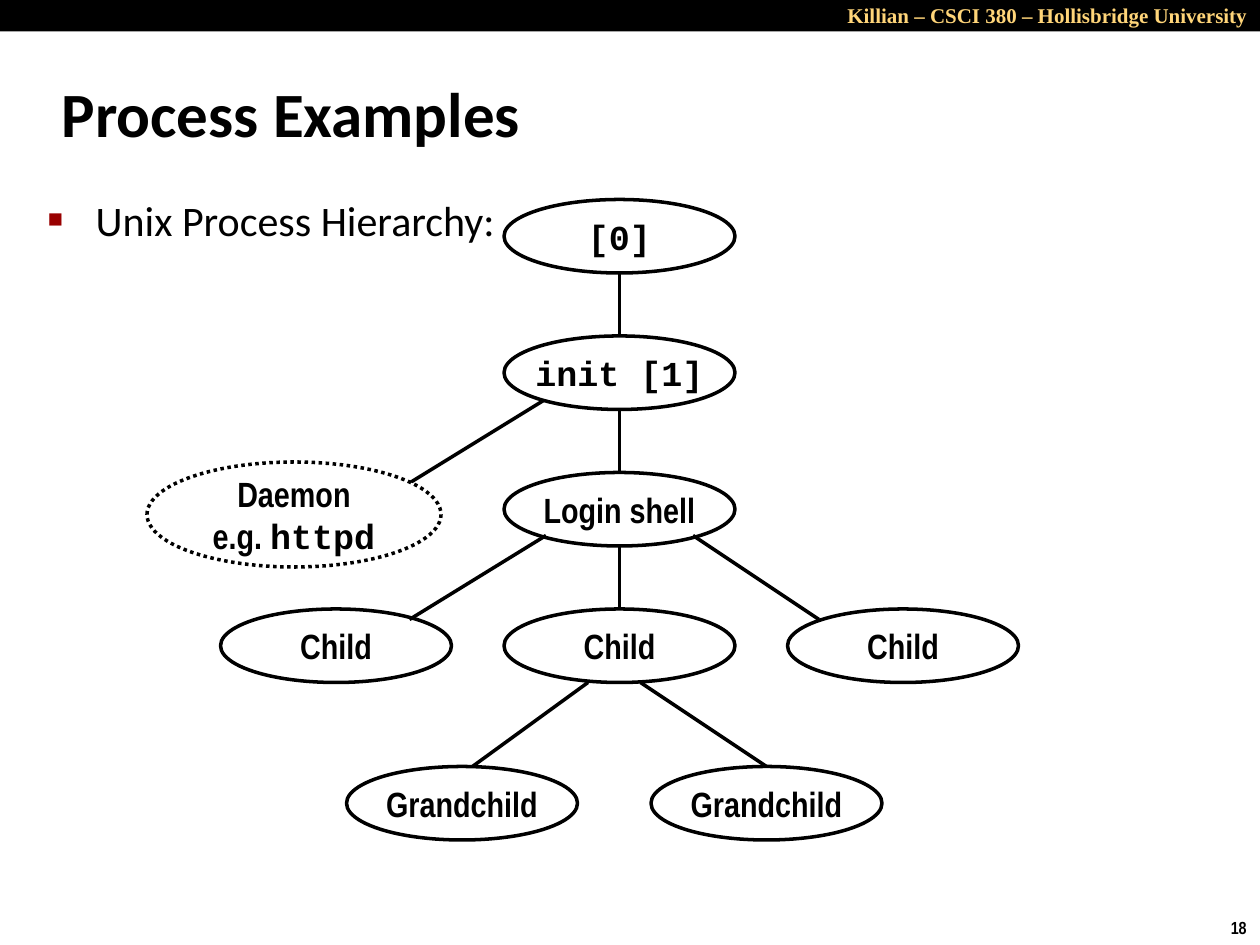
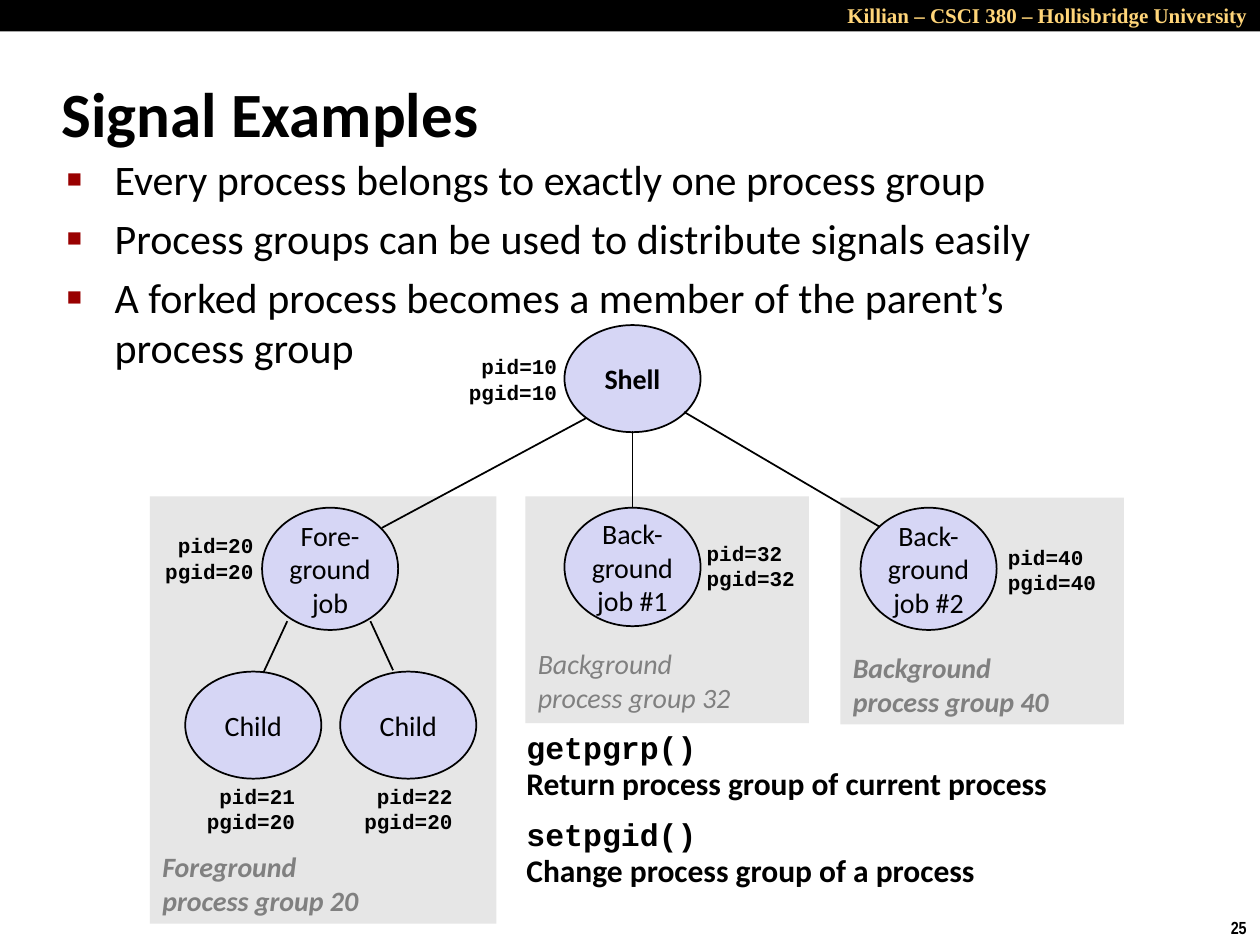
import lxml.etree
import pptx
import pptx.dml.color
import pptx.enum.dml
import pptx.enum.shapes
import pptx.enum.text
import pptx.oxml.ns
import pptx.util

ALIGN = pptx.enum.text.PP_ALIGN
ANCHOR = pptx.enum.text.MSO_ANCHOR
FIT = pptx.enum.text.MSO_AUTO_SIZE
SHAPE = pptx.enum.shapes.MSO_SHAPE
Pt = pptx.util.Pt

BLACK, WHITE, GOLD, MAROON = "000000", "FFFFFF", "FFD579", "990000"
PALE_GREY, GREY, LAVENDER = "E6E6E6", "808080", "D6D6F5"


def font(name, size, colour=BLACK, bold=True, italic=False):
    return {"name": name, "size": Pt(size), "bold": bold, "italic": italic}, colour


FONTS = {
    "course": font("Times New Roman", 12, GOLD),
    "number": font("Arial Narrow", 10),
    "title": font("Calibri", 36),
    "body": font("Calibri", 24, bold=False),
    "process": font("Arial Narrow", 20),
    "command": font("Courier New", 20),
    "shell": font("Calibri", 16),
    "job": font("Calibri", 16, bold=False),
    "ids": font("Courier New", 12),
    "group": font("Calibri", 16, GREY, italic=True),
    "light group": font("Calibri", 16, GREY, bold=False, italic=True),
    "call": font("Courier New", 18),
    "meaning": font("Calibri", 18),
}


def rgb(colour):
    return pptx.dml.color.RGBColor.from_string(colour)


def apply(target, values):
    for name, value in values.items():
        setattr(target, name, value)


class Deck:
    def __init__(self):
        self.file = pptx.Presentation()
        self.file.slide_width = pptx.util.Inches(10)
        self.file.slide_height = pptx.util.Inches(7.5)

    def grid(self, columns, rows):
        self.column = self.file.slide_width / columns
        self.row = self.file.slide_height / rows

    def place(self, *lengths):
        return [round(length * unit) for length, unit in zip(lengths, (self.column, self.row) * 2)]

    def start_slide(self, title, number, points, body_corner):
        self.slide = self.file.slides.add_slide(self.file.slide_layouts[1])
        self.grid(100, 75)
        self.shape(SHAPE.RECTANGLE, (0, 0, 100, 2.5), BLACK)
        self.text((58.3, -0.3, 41.7, 3), ["Killian – CSCI 380 – Hollisbridge University"],
                  "course", {"alignment": ALIGN.RIGHT}, wrap=True, anchor=ANCHOR.TOP)
        self.text((96.7, 72.3, 3.4, 2.7), [number], "number", anchor=ANCHOR.TOP)
        heading, body = self.slide.placeholders
        self.fill_placeholder(heading, (3.9, 4.8, 83, 8.3), [title], "title", ANCHOR.MIDDLE)
        self.fill_placeholder(body, (*body_corner, 86.4, 54.4), points, "body", ANCHOR.TOP)
        for point in body.text_frame.paragraphs:
            self.bullet(point)

    def fill_placeholder(self, holder, box, lines, style, anchor):
        apply(holder, dict(zip(("left", "top", "width", "height"), self.place(*box))))
        apply(holder.text_frame, {"auto_size": FIT.NONE, "vertical_anchor": anchor, "word_wrap": True})
        self.set_lines(holder.text_frame, lines, style, {"alignment": ALIGN.LEFT})

    def bullet(self, paragraph):
        properties = paragraph._p.get_or_add_pPr()
        properties.set("marL", str(pptx.util.Inches(0.38)))
        properties.set("indent", str(-pptx.util.Inches(0.38)))

        def add(parent, tag, **attributes):
            return lxml.etree.SubElement(parent, pptx.oxml.ns.qn(tag), attributes)

        add(add(properties, "a:buClr"), "a:srgbClr", val=MAROON)
        add(properties, "a:buSzPct", val="60000")
        add(properties, "a:buFont", typeface="Arial")
        add(properties, "a:buChar", char="■")

    def set_lines(self, frame, lines, style, layout):
        for index, line in enumerate(lines):
            paragraph = frame.add_paragraph() if index else frame.paragraphs[0]
            apply(paragraph, layout)
            for words, words_style in [(line, style)] if isinstance(line, str) else line:
                run = paragraph.add_run()
                run.text = words.rstrip("\n")
                values, colour = FONTS[words_style]
                apply(run.font, values)
                run.font.color.rgb = rgb(colour)
                if words.endswith("\n"):
                    paragraph.add_line_break()

    def text(self, box, lines, style, layout=None, wrap=False, anchor=ANCHOR.MIDDLE, fit=FIT.SHAPE_TO_FIT_TEXT):
        frame = self.slide.shapes.add_textbox(*self.place(*box)).text_frame
        apply(frame, {"word_wrap": wrap, "vertical_anchor": anchor, "auto_size": fit})
        self.set_lines(frame, lines, style, layout or {"alignment": ALIGN.LEFT})

    def shape(self, kind, box, fill):
        shape = self.slide.shapes.add_shape(kind, *self.place(*box))
        shape.shadow.inherit = False
        shape.fill.solid()
        shape.fill.fore_color.rgb = rgb(fill)
        shape.line.fill.background()
        return shape

    def outline(self, line, width, dash=None):
        line.color.rgb = rgb(BLACK)
        apply(line, {"width": Pt(width), "dash_style": dash})

    def node(self, box, lines, style, fill=WHITE, width=2, dash=None):
        oval = self.shape(SHAPE.OVAL, box, fill)
        self.outline(oval.line, width, dash)
        apply(oval.text_frame, {"word_wrap": False, "vertical_anchor": ANCHOR.MIDDLE})
        self.set_lines(oval.text_frame, lines, style, {"alignment": ALIGN.CENTER})

    def link(self, start, end, width):
        connector = self.slide.shapes.add_connector(
            pptx.enum.shapes.MSO_CONNECTOR.STRAIGHT, *self.place(*start, *end))
        self.outline(connector.line, width)
        lxml.etree.SubElement(connector._element.spPr, pptx.oxml.ns.qn("a:effectLst"))


def process_examples(deck):
    deck.start_slide("Process Examples", "18", ["Unix Process Hierarchy:"], (2.8, 14.9))
    deck.grid(120, 90)
    trunk, step, width, height = 48, 13, 22, 7
    root, init, login, child = [19 + step * level for level in range(4)]
    grandchild = 73

    def process(column, row, name, style="process"):
        deck.node((column, row, width, height), [name], style)

    process(trunk, login, "Login shell")
    for column in (75, trunk, 21):
        process(column, child, "Child")
    for column in (62, 33):
        process(column, grandchild, "Grandchild")
    process(trunk, root, "[0]", "command")
    middle = trunk + width / 2
    for parent in (root, init, login):
        deck.link((middle, parent + height), (middle, parent + step), 2)
    for start, end in (((52, 51), (39, 59)), ((66, 51), (78, 59)), ((61, 65), (73, grandchild)),
                       ((56, 65), (45, grandchild)), ((52, 38), (39, 46))):
        deck.link(start, end, 2)
    deck.node((14, 44, 28, 10), ["Daemon", [("e.g. ", "process"), ("httpd", "command")]],
              "process", dash=pptx.enum.dml.MSO_LINE.ROUND_DOT)
    process(trunk, init, "init [1]", "command")


def signal_examples(deck):
    deck.start_slide("Signal Examples", "25", [
        "Every process belongs to exactly one process group",
        "Process groups can be used to distribute signals easily",
        "A forked process becomes a member of the parent’s process group",
    ], (4.3, 11.7))

    for area in ((66.7, 39.5, 22.5, 18), (41.7, 39.4, 22.5, 18), (11.9, 39.4, 27.5, 33.9)):
        deck.shape(SHAPE.RECTANGLE, area, PALE_GREY)

    for column, row, height, lines, style in (
        (20.8, 40.3, 9.7, ["Fore-", "ground", "job"], "job"),
        (44.8, 40.3, 9.4, ["Back-", "ground", "job #1"], "job"),
        (68.3, 40.3, 9.7, ["Back-", "ground", "job #2"], "job"),
        (44.8, 25.8, 8.5, ["Shell"], "shell"),
        (14.7, 53.3, 8.5, ["Child"], "job"),
        (27, 53.3, 8.5, ["Child"], "job"),
    ):
        deck.node((column, row, 10.8, height), lines, style, LAVENDER, 1)

    for start, end in (((22.8, 49.3), (20.9, 53.4)), ((29.4, 49.3), (31.2, 53.2)),
                       ((50.2, 34.2), (50.2, 40.3)), ((46.5, 33.2), (30.3, 41.9)),
                       ((54.3, 32.7), (69.8, 41.8))):
        deck.link(start, end, 1)

    for column, row, pid, pgid, side in (
        (36.1, 27.6, 10, 10, ALIGN.RIGHT),
        (12, 41.8, 20, 20, ALIGN.RIGHT),
        (55.1, 42.4, 32, 32, ALIGN.LEFT),
        (79, 42.7, 40, 40, ALIGN.LEFT),
        (15.3, 61.7, 21, 20, ALIGN.RIGHT),
        (27.8, 61.7, 22, 20, ALIGN.RIGHT),
    ):
        deck.text((column, row, 9.1, 5), [f"pid={pid}", f"pgid={pgid}"], "ids", {"alignment": side})

    for column, row, place, group, style in (
        (11.9, 66.9, "Foreground", 20, "group"),
        (41.7, 50.8, "Background", 32, "light group"),
        (66.7, 51.1, "Background", 40, "group"),
    ):
        deck.text((column, row, 17.8, 6.4), [place, f"process group {group}"], style)

    calls = (("getpgrp()", "Return process group of current process"),
             ("setpgid()", "Change process group of a process"))
    deck.text((40.8, 57.5, 45, 15),
              [[(call + "\n", "call"), (meaning, "meaning")] for call, meaning in calls], "call",
              {"line_spacing": 0.95, "space_before": Pt(9), "alignment": ALIGN.LEFT},
              wrap=True, anchor=ANCHOR.TOP, fit=FIT.NONE)


def main():
    deck = Deck()
    process_examples(deck)
    signal_examples(deck)
    deck.file.save("out.pptx")


if __name__ == "__main__":
    main()
